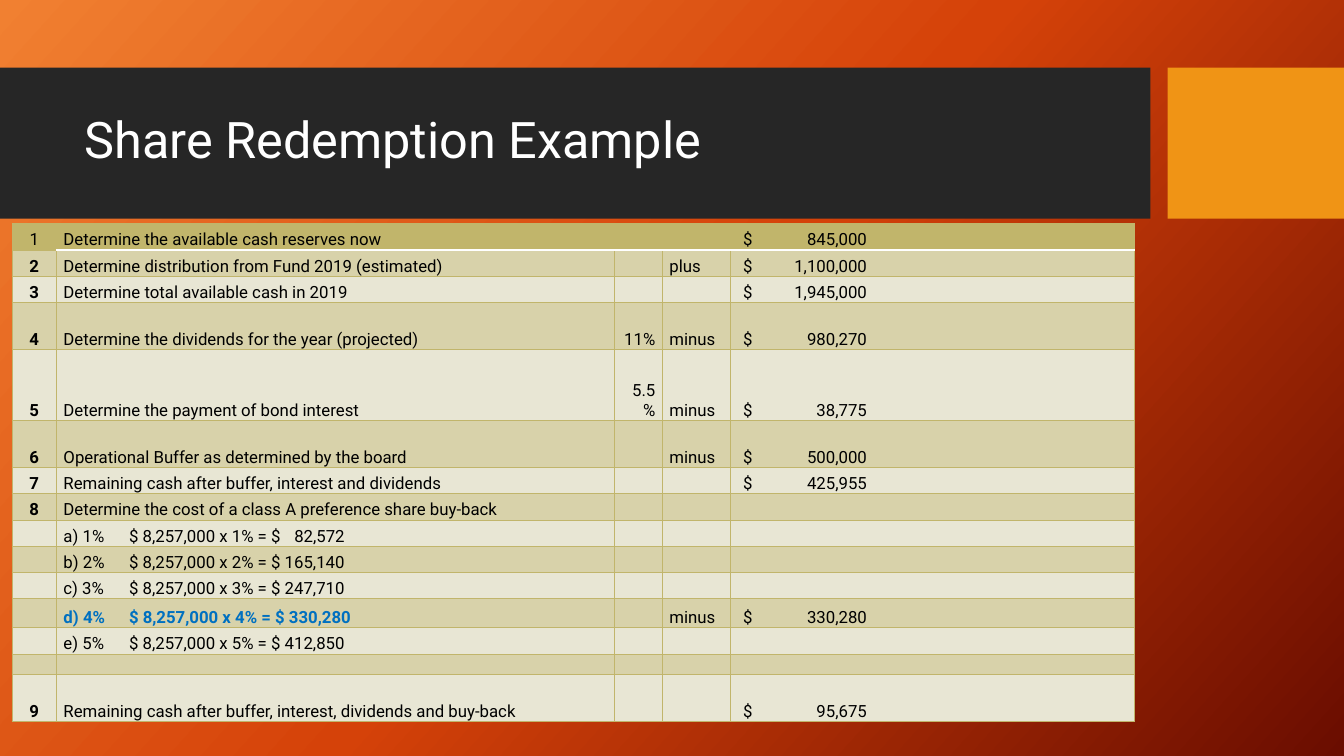
from copy import deepcopy
from dataclasses import dataclass

from lxml.etree import SubElement
from pptx import Presentation
from pptx.dml.color import RGBColor as Rgb
from pptx.enum.shapes import MSO_SHAPE as Preset
from pptx.enum.text import MSO_ANCHOR as Anchor, MSO_AUTO_SIZE as AutoSize, PP_ALIGN as Align
from pptx.oxml.ns import qn
from pptx.util import Inches, Pt


@dataclass(frozen=True)
class Theme:
    """Colours, font and type sizes of the slide."""

    font: str = "Roboto"
    title_size: int = 36
    cell_size: int = 12
    white: str = "FFFFFF"
    black: str = "000000"
    bar: str = "262626"
    accent: str = "F09415"
    header: str = "C1B56B"
    bands: tuple = ("E8E6D4", "D8D2AA")
    highlight: str = "0070C0"
    backdrop: tuple = ("F18031", "D54209", "6A0D00")


THEME = Theme()
COLUMNS = (0.44, 5.53, 0.48, 0.68, 4)
ALIGNMENTS = (Align.CENTER, Align.LEFT, Align.RIGHT, Align.LEFT, Align.LEFT)
LINE = 0.26
CHOSEN = "d)"
STEPS = (
    (LINE, "1", "Determine the available cash reserves now", "", "", "845,000"),
    (LINE, "2", "Determine distribution from Fund 2019 (estimated)", "", "plus", "1,100,000"),
    (LINE, "3", "Determine total available cash in 2019", "", "", "1,945,000"),
    (0.47, "4", "Determine the dividends for the year (projected)", "11%", "minus", "980,270"),
    (0.7, "5", "Determine the payment of bond interest", "5.5%", "minus", "38,775"),
    (0.47, "6", "Operational Buffer as determined by the board", "", "minus", "500,000"),
    (LINE, "7", "Remaining cash after buffer, interest and dividends", "", "", "425,955"),
    (LINE, "8", "Determine the cost of a class A preference share buy-back", "", "", ""),
    (LINE, "", "a) 1%\t$ 8,257,000 x 1% = $\t82,572", "", "", ""),
    (LINE, "", "b) 2%\t$ 8,257,000 x 2% = $ 165,140", "", "", ""),
    (LINE, "", "c) 3%\t$ 8,257,000 x 3% = $ 247,710", "", "", ""),
    (0.29, "", "d) 4%\t$ 8,257,000 x 4% = $ 330,280", "", "minus", "330,280"),
    (LINE, "", "e) 5%\t$ 8,257,000 x 5% = $ 412,850", "", "", ""),
    (0.2, "", "", "", "", ""),
    (0.47, "9", "Remaining cash after buffer, interest, dividends and buy-back", "", "", "95,675"),
)
TABS = {1: ((0.65, "l"), (2.79, "r")), 4: ((1.23, "r"),)}


def style_span(span, size, colour, bold=False):
    """Apply the theme font to one run."""
    span.font.name = THEME.font
    span.font.size = Pt(size)
    span.font.bold = bold
    span.font.color.rgb = Rgb.from_string(colour)


def paint_background(page):
    """Fill the page with the diagonal three-colour gradient."""
    fill = page.background.fill
    fill.gradient()
    fill.gradient_angle = 318
    stops = page.element.find(".//" + qn("a:gsLst"))
    stops.insert(1, deepcopy(stops[0]))
    for index, (stop, colour) in enumerate(zip(fill.gradient_stops, THEME.backdrop)):
        stop.position = index / 2
        stop.color.rgb = Rgb.from_string(colour)


def add_block(page, box, colour):
    """Draw a plain rectangle in the given box."""
    block = page.shapes.add_shape(Preset.RECTANGLE, *map(Inches, box))
    block.shadow.inherit = False
    block.fill.solid()
    block.fill.fore_color.rgb = Rgb.from_string(colour)
    block.line.fill.background()


def add_heading(page, box, text):
    """Draw the dark bar, its accent block and the title between them."""
    left, top, width, height = box
    accent_width = 1.75
    bar_width = width - accent_width - 0.17
    add_block(page, (left, top, bar_width, height), THEME.bar)
    add_block(page, (left + width - accent_width, top, accent_width, height), THEME.accent)

    title = page.shapes.title
    title.left, title.top = Inches(left + 0.74), Inches(top + 0.15)
    title.width, title.height = Inches(bar_width - 0.9), Inches(1.18)
    frame = title.text_frame
    frame.text = text
    frame.word_wrap = True
    frame.auto_size = AutoSize.NONE
    frame.vertical_anchor = Anchor.MIDDLE
    para = frame.paragraphs[0]
    para.alignment = Align.LEFT
    para.line_spacing = 0.9
    style_span(para.runs[0], THEME.title_size, THEME.white)
    page.shapes._spTree.append(title._element)


def add_borders(cell, row, column):
    """Rule the four edges of a cell, with white under the header."""
    properties = cell._tc.get_or_add_tcPr()
    for edge in "LRTB":
        under_header = column > 0 and (row, edge) in ((0, "B"), (1, "T"))
        width = Pt(1 if under_header else 0.75)
        line = SubElement(properties, qn(f"a:ln{edge}"), w=str(width))
        solid = SubElement(line, qn("a:solidFill"))
        colour = THEME.white if under_header else THEME.header
        SubElement(solid, qn("a:srgbClr"), val=colour)


def add_tabs(para, stops):
    """Give a paragraph its tab stops."""
    tabs = SubElement(para._p.get_or_add_pPr(), qn("a:tabLst"))
    for position, alignment in stops:
        SubElement(tabs, qn("a:tab"), pos=str(Inches(position)), algn=alignment)


def fill_cell(cell, row, column, text):
    """Write and format one table cell."""
    cell.margin_left = Inches(0.12 if column == 4 else 0.07)
    cell.margin_right = Inches(0.07)
    cell.margin_top = cell.margin_bottom = 0
    cell.vertical_anchor = Anchor.BOTTOM
    add_borders(cell, row, column)
    cell.fill.solid()
    colour = THEME.bands[row % 2] if row else THEME.header
    cell.fill.fore_color.rgb = Rgb.from_string(colour)

    para = cell.text_frame.paragraphs[0]
    if not text:
        SubElement(para._p, qn("a:endParaRPr"), sz=str(THEME.cell_size * 100))
        return
    para.text = f"$\t{text}" if column == 4 else text
    para.alignment = ALIGNMENTS[column]
    if "\t" in para.text:
        add_tabs(para, TABS[column])
    chosen = text.startswith(CHOSEN)
    bold = chosen or (column == 0 and row > 0)
    style_span(para.runs[0], THEME.cell_size, THEME.highlight if chosen else THEME.black, bold)


def add_steps(page, left, top):
    """Draw the table of redemption steps."""
    heights = [step[0] for step in STEPS]
    box = (left, top, sum(COLUMNS), sum(heights))
    table = page.shapes.add_table(len(STEPS), len(COLUMNS), *map(Inches, box)).table
    table.first_row = table.horz_banding = False
    for column, width in zip(table.columns, COLUMNS):
        column.width = Inches(width)
    for row, (height, *texts) in enumerate(STEPS):
        table.rows[row].height = Inches(height)
        for column, text in enumerate(texts):
            fill_cell(table.cell(row, column), row, column, text)


def main():
    """Build the slide and save the deck."""
    deck = Presentation()
    deck.slide_width, deck.slide_height = Inches(13.33), Inches(7.5)
    page = deck.slides.add_slide(deck.slide_layouts[5])
    paint_background(page)
    add_heading(page, (0, 0.67, 13.33, 1.5), "Share Redemption Example")
    add_steps(page, 0.12, 2.22)
    deck.save("out.pptx")


if __name__ == "__main__":
    main()
